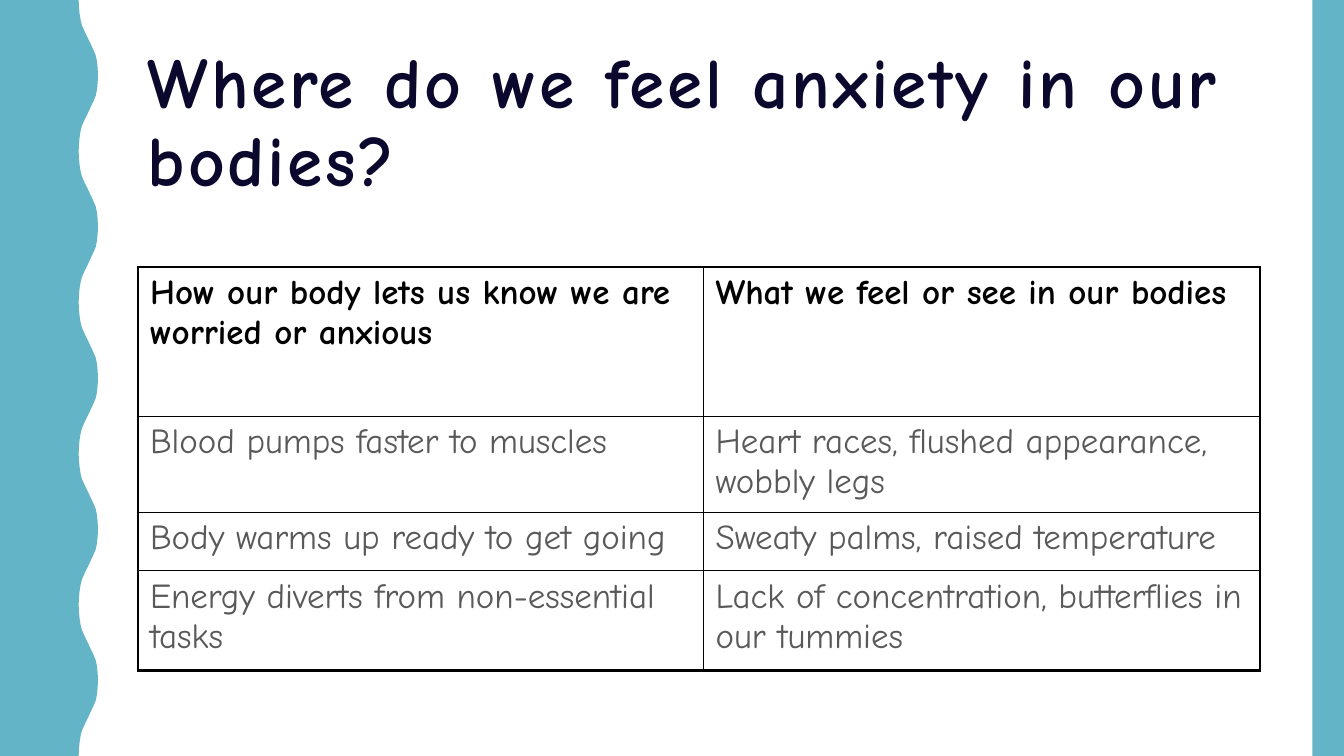
from pptx import Presentation
from pptx.dml.color import RGBColor
from pptx.enum.shapes import MSO_SHAPE
from pptx.enum.text import MSO_ANCHOR
from pptx.oxml import parse_xml
from pptx.oxml.ns import nsdecls
from pptx.util import Pt

RECTANGLE = MSO_SHAPE.RECTANGLE
MIDDLE = MSO_ANCHOR.MIDDLE
TEAL = RGBColor(0x62, 0xB4, 0xC6)
NAVY = RGBColor(0x0B, 0x08, 0x2E)
BLACK = RGBColor(0, 0, 0)
GREY = RGBColor(0x59, 0x59, 0x59)
WHITE = RGBColor(255, 255, 255)
FONT = "Comic Neue"
WIDTH, HEIGHT = 960, 540


def add_span(para, text, size, color, bold):
    span = para.add_run()
    span.text = text
    span.font.name = FONT
    span.font.size = Pt(size)
    span.font.bold = bold
    span.font.color.rgb = color
    return span


def paint_teal(shape):
    shape.shadow.inherit = False
    shape.fill.solid()
    shape.fill.fore_color.rgb = TEAL
    shape.line.fill.background()


deck = Presentation()
deck.slide_width, deck.slide_height = Pt(WIDTH), Pt(HEIGHT)
page = deck.slides.add_slide(deck.slide_layouts[6])
page.background.fill.solid()
page.background.fill.fore_color.rgb = WHITE

half_wave = [
    (56.2, 0), (56.4, 5), (56.9, 10), (57.6, 14.4), (58.5, 18), (59.8, 21),
    (61.2, 24), (62.7, 27), (64.1, 30), (65.5, 33), (66.9, 36), (68.4, 39.6),
    (69.3, 44), (69.8, 49), (70, 54),
]
wave = half_wave + [(x, 108 - y) for x, y in half_wave[-2:0:-1]]
edge = [(x, y + 108 * turn) for turn in range(5) for x, y in wave]
outline = edge + [(56.2, HEIGHT), (0, HEIGHT)]
builder = page.shapes.build_freeform(0, 0, scale=1.0)
builder.add_line_segments([(Pt(x), Pt(y)) for x, y in outline], close=True)
paint_teal(builder.convert_to_shape())

right_band = page.shapes.add_shape(RECTANGLE, Pt(937.5), 0, Pt(22.5), Pt(HEIGHT))
paint_teal(right_band)

title_box = page.shapes.add_textbox(Pt(98.6), Pt(30.2), Pt(801.4), Pt(117.4))
title_box.text_frame.word_wrap = True
title_box.text_frame.vertical_anchor = MIDDLE
title = title_box.text_frame.paragraphs[0]
title.line_spacing = 0.9
title_span = add_span(title, "Where do we feel anxiety in our bodies?", 51, NAVY, True)
title_span.font._element.set("spc", "200")

rows = [
    ("How our body lets us know we are worried or anxious",
     "What we feel or see in our bodies"),
    ("Blood pumps faster to muscles",
     "Heart races, flushed appearance, wobbly legs"),
    ("Body warms up ready to get going",
     "Sweaty palms, raised temperature"),
    ("Energy diverts from non-essential tasks",
     "Lack of concentration, butterflies in our tummies"),
]
column_widths = [404, 397.4]
row_heights = [106.5, 66.4, 41.8, 71.3]
frame = page.shapes.add_table(
    len(rows), len(column_widths), Pt(98.6), Pt(190.8),
    Pt(sum(column_widths)), Pt(sum(row_heights)))
table = frame.table
table.first_row = False
table.horz_banding = False
for column, width in zip(table.columns, column_widths):
    column.width = Pt(width)
for row, height in zip(table.rows, row_heights):
    row.height = Pt(height)

for r, texts in enumerate(rows):
    for c, text in enumerate(texts):
        cell = table.cell(r, c)
        cell.margin_left = cell.margin_right = Pt(8.64)
        cell.margin_top = cell.margin_bottom = Pt(4.32)
        outer_sides = {"L": c == 0, "R": c == len(texts) - 1,
                       "T": r == 0, "B": r == len(rows) - 1}
        for side, outer in outer_sides.items():
            thickness = Pt(2.25 if outer else 1)
            cell._tc.get_or_add_tcPr().append(parse_xml(
                f'<a:ln{side} {nsdecls("a")} w="{thickness}"><a:solidFill>'
                f'<a:srgbClr val="{BLACK}"/></a:solidFill></a:ln{side}>'))
        cell.fill.background()
        para = cell.text_frame.paragraphs[0]
        add_span(para, text, 25, BLACK if r == 0 else GREY, r == 0)

deck.save("out.pptx")
